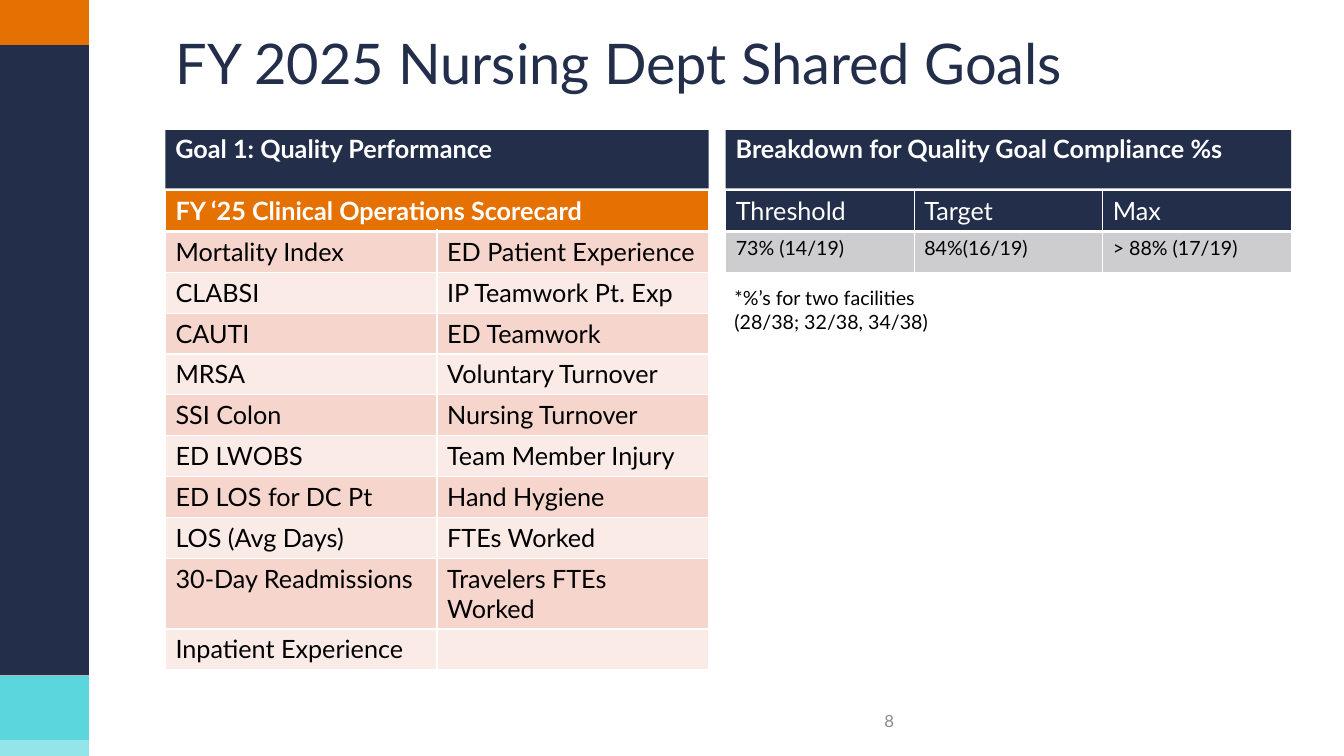
from lxml.etree import SubElement
from pptx import Presentation
from pptx.dml.color import RGBColor
from pptx.enum.shapes import MSO_SHAPE
from pptx.enum.text import MSO_ANCHOR, MSO_AUTO_SIZE, PP_ALIGN
from pptx.oxml.ns import qn
from pptx.util import Cm, Pt

NAVY, ORANGE, WHITE, BLACK = "222E4A", "E57102", "FFFFFF", "000000"
LEFT, RIGHT = 4.17, 18.29
LEFT_W, RIGHT_W = 13.69, 14.25
ROW_H = 1.03

SIDEBAR = [
    (0, 1.14, ORANGE),
    (1.14, 15.88, NAVY),
    (17.04, 1.62, "5CD6DD"),
    (18.65, 0.4, "93E5E9"),
]
SCORECARD = [
    ["FY ‘25 Clinical Operations Scorecard", ""],
    ["Mortality Index", "ED Patient Experience"],
    ["CLABSI", "IP Teamwork Pt. Exp"],
    ["CAUTI", "ED Teamwork"],
    ["MRSA", "Voluntary Turnover"],
    ["SSI Colon", "Nursing Turnover"],
    ["ED LWOBS", "Team Member Injury"],
    ["ED LOS for DC Pt", "Hand Hygiene"],
    ["LOS (Avg Days)", "FTEs Worked"],
    ["30-Day Readmissions", "Travelers FTEs Worked"],
    ["Inpatient Experience", ""],
]
COMPLIANCE = [
    ["Threshold", "Target", "Max"],
    ["73% (14/19)", "84%(16/19)", "> 88% (17/19)"],
]


def rgb(color):
    return RGBColor.from_string(color)


def write(tf, lines, size, color, bold=False, **para_format):
    for i, line in enumerate(lines):
        p = tf.paragraphs[0] if i == 0 else tf.add_paragraph()
        for name, value in para_format.items():
            setattr(p, name, value)
        r = p.add_run()
        r.text = line
        for name, value in {"name": "Lato", "size": Pt(size), "bold": bold}.items():
            setattr(r.font, name, value)
        r.font.color.rgb = rgb(color)


def add_block(s, x, y, w, h, color):
    sp = s.shapes.add_shape(MSO_SHAPE.RECTANGLE, Cm(x), Cm(y), Cm(w), Cm(h))
    sp.shadow.inherit = False
    sp.fill.solid()
    sp.fill.fore_color.rgb = rgb(color)
    sp.line.fill.background()
    return sp


def add_heading(s, x, w, text):
    tf = add_block(s, x, 3.28, w, 1.47, NAVY).text_frame
    tf.word_wrap = True
    tf.vertical_anchor = MSO_ANCHOR.TOP
    write(tf, [text], 18, WHITE, True, alignment=PP_ALIGN.LEFT, line_spacing=Pt(20))


def add_text(s, x, y, w, h, lines, size, color, anchor=MSO_ANCHOR.TOP, **para_format):
    tf = s.shapes.add_textbox(Cm(x), Cm(y), Cm(w), Cm(h)).text_frame
    tf.word_wrap = True
    tf.vertical_anchor = anchor
    write(tf, lines, size, color, **para_format)


def set_title(s, text):
    sp = s.shapes.title
    box = {"left": 4.17, "top": 0.79, "width": 28.37, "height": 3.23}
    for name, value in box.items():
        setattr(sp, name, Cm(value))
    tf = sp.text_frame
    tf.auto_size = MSO_AUTO_SIZE.NONE
    tf.vertical_anchor = MSO_ANCHOR.TOP
    write(tf, [text], 40, NAVY, alignment=PP_ALIGN.LEFT, line_spacing=0.9)


def set_borders(cell, bottom):
    tcPr = cell._tc.get_or_add_tcPr()
    for side, width in {"L": 1, "R": 1, "T": 1, "B": bottom}.items():
        ln = SubElement(tcPr, qn(f"a:ln{side}"), w=str(Pt(width)))
        fill = SubElement(ln, qn("a:solidFill"))
        SubElement(fill, qn("a:srgbClr"), val=WHITE)


def add_grid(s, x, w, rows, head_fill, head_bold, body_fills, body_size):
    n_cols = len(rows[0])
    frame = s.shapes.add_table(
        len(rows), n_cols, Cm(x), Cm(4.8), Cm(w), Cm(ROW_H * len(rows)))
    table = frame.table
    table.horz_banding = False
    for col in table.columns:
        col.width = Cm(w / n_cols)
    for i, texts in enumerate(rows):
        table.rows[i].height = Cm(ROW_H)
        head = i == 0
        fill = head_fill if head else body_fills[(i - 1) % len(body_fills)]
        for j, text in enumerate(texts):
            cell = table.cell(i, j)
            set_borders(cell, 3 if head else 1)
            cell.fill.solid()
            cell.fill.fore_color.rgb = rgb(fill)
            if text:
                write(cell.text_frame, [text], 18 if head else body_size,
                      WHITE if head else BLACK, head and head_bold)
    return table


def main():
    prs = Presentation()
    prs.slide_width, prs.slide_height = Cm(33.87), Cm(19.05)
    s = prs.slides.add_slide(prs.slide_layouts[5])
    for y, h, color in SIDEBAR:
        add_block(s, 0, y, 2.24, h, color)
    set_title(s, "FY 2025 Nursing Dept Shared Goals")
    add_heading(s, LEFT, LEFT_W, "Goal 1: Quality Performance")
    add_heading(s, RIGHT, RIGHT_W, "Breakdown for Quality Goal Compliance %s")
    scorecard = add_grid(s, LEFT, LEFT_W, SCORECARD, ORANGE, True, ["F5D5CC", "FAEBE7"], 18)
    scorecard.cell(0, 0).merge(scorecard.cell(0, 1))
    add_grid(s, RIGHT, RIGHT_W, COMPLIANCE, NAVY, False, ["CDCDD0"], 14)
    add_text(s, 19.76, 17.65, 3.02, 1.02, ["8"], 12, "8C8C8C",
             MSO_ANCHOR.MIDDLE, alignment=PP_ALIGN.RIGHT)
    add_text(s, 18.26, 7.09, 7.16, 1.45,
             ["*%’s for two facilities", "(28/38; 32/38, 34/38)"], 14, BLACK)
    prs.save("out.pptx")


if __name__ == "__main__":
    main()
